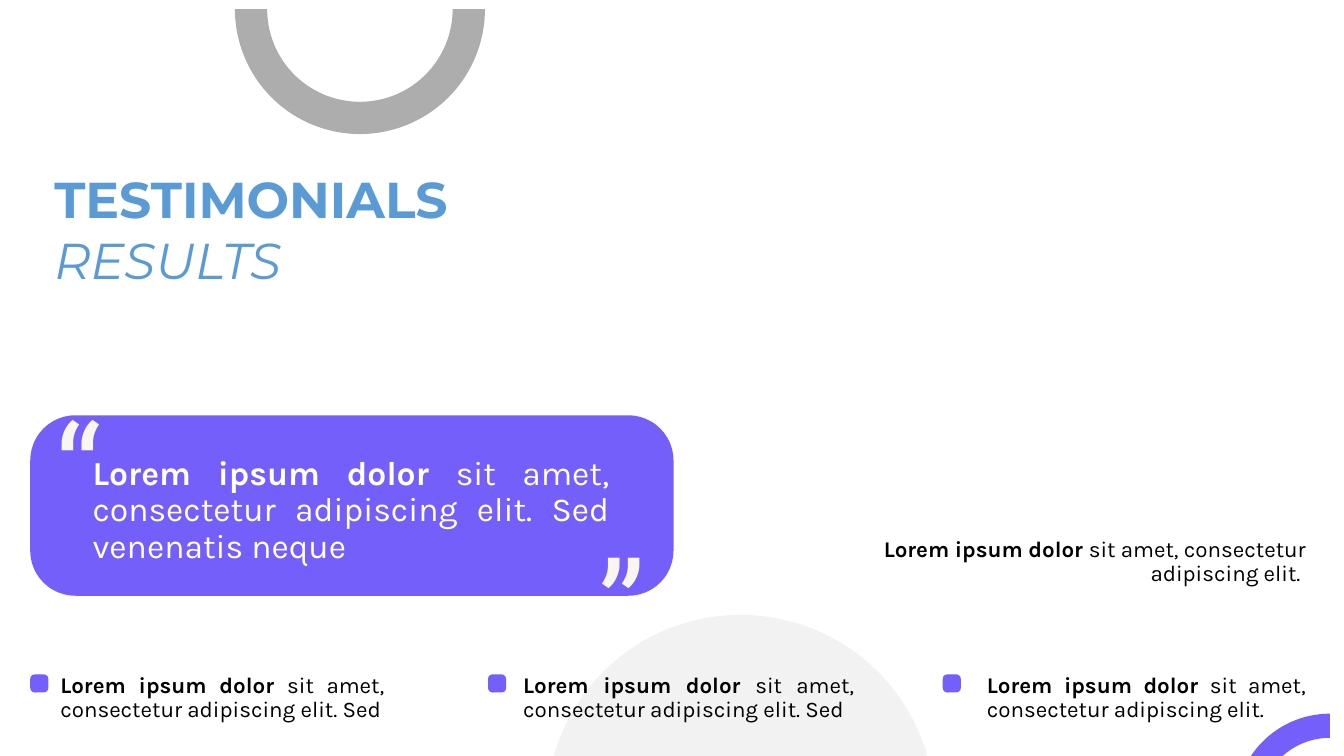
from dataclasses import dataclass
from math import cos, radians, sin

from lxml import etree
from pptx import Presentation
from pptx.dml.color import RGBColor
from pptx.enum.shapes import MSO_SHAPE
from pptx.enum.text import PP_ALIGN
from pptx.oxml.ns import qn
from pptx.util import Pt

PX = 9144  # EMU per px, 100 px to the inch
OVAL, ROUNDED = MSO_SHAPE.OVAL, MSO_SHAPE.ROUNDED_RECTANGLE
RIGHT, JUSTIFY = PP_ALIGN.RIGHT, PP_ALIGN.JUSTIFY

VIOLET, GREY, PALE = "755FFB", "ADADAD", "F2F2F2"
BLUE, CREAM, WHITE, BLACK = "5B9BD5", "F9F6F2", "FFFFFF", "000000"
LEAD = "Lorem ipsum dolor "
SHORT_REST = "sit amet, consectetur adipiscing elit. "


@dataclass
class Box:
    left: int
    top: int
    width: int
    height: int

    def emu(self) -> tuple:
        return tuple(v * PX for v in (self.left, self.top, self.width, self.height))


@dataclass
class HalfRing:
    x: int
    y: int
    outer: int
    inner: int
    start: int  # degrees, clockwise from the right
    color: str


@dataclass
class Quote:
    box: Box
    rest: str
    align: PP_ALIGN = JUSTIFY
    size: int = 16
    color: str = BLACK


TOP_RING = HalfRing(357, 9, 124, 92, 0, GREY)
CORNER_RING = HalfRing(1319, 802, 94, 70, 90, VIOLET)
BULLET_LEFTS = [30, 484, 935]
QUOTE_MARKS = [(Box(45, 381, 100, 245), 0), (Box(551, 375, 100, 245), 180)]
QUOTES = [
    Quote(Box(82, 448, 532, 230), SHORT_REST + "Sed venenatis neque", size=24, color=WHITE),
    Quote(Box(50, 664, 341, 230), SHORT_REST + "Sed"),
    Quote(Box(509, 664, 348, 230), SHORT_REST + "Sed"),
    Quote(Box(969, 664, 336, 230), SHORT_REST),
    Quote(Box(823, 529, 482, 230), SHORT_REST, RIGHT),
]


def rgb(color: str) -> RGBColor:
    return RGBColor.from_string(color)


def paint(shape, color: str) -> None:
    shape.shadow.inherit = False
    shape.fill.solid()
    shape.fill.fore_color.rgb = rgb(color)
    shape.line.fill.background()


def add_half_ring(slide, ring: HalfRing) -> None:
    # Quarter points along the outer edge, then back along the inner edge
    quarters = [ring.start, ring.start + 90, ring.start + 180]
    stops = [(ring.outer, a) for a in quarters] + [(ring.inner, a) for a in reversed(quarters)]
    points = [
        (round((ring.x + r * cos(radians(a))) * PX), round((ring.y + r * sin(radians(a))) * PX))
        for r, a in stops
    ]
    builder = slide.shapes.build_freeform(*points[0])
    builder.add_line_segments(points[1:], close=True)
    half_ring = builder.convert_to_shape()

    # Bend each segment that stays on one edge into a quarter arc
    segments = list(half_ring._element.iter(qn("a:lnTo")))
    for segment, (radius, angle), (next_radius, next_angle) in zip(segments, stops, stops[1:]):
        if radius == next_radius:
            arc = etree.Element(qn("a:arcTo"))
            arc.set("wR", str(radius * PX))
            arc.set("hR", str(radius * PX))
            arc.set("stAng", str(angle * 60000))
            arc.set("swAng", str((next_angle - angle) * 60000))
            segment.getparent().replace(segment, arc)
    paint(half_ring, ring.color)


def add_block(slide, preset, box: Box, color: str) -> None:
    block = slide.shapes.add_shape(preset, *box.emu())
    if preset == ROUNDED:
        block.adjustments[0] = 0.25
    paint(block, color)


def add_frame(slide, box: Box, rotation: int = 0):
    textbox = slide.shapes.add_textbox(*box.emu())
    textbox.rotation = rotation
    textbox.text_frame.word_wrap = True
    return textbox.text_frame


def style(run, font: str, size: float, color: str, bold=False, italic=False) -> None:
    run.font.name = font
    run.font.size = Pt(size)
    run.font.color.rgb = rgb(color)
    run.font.bold = bold
    run.font.italic = italic


def add_quote_mark(slide, box: Box, rotation: int) -> None:
    frame = add_frame(slide, box, rotation)
    frame.text = "“"
    mark = frame.paragraphs[0].runs[0]
    style(mark, "Roboto", 92.3, CREAM)
    mark.font._element.set("spc", "250")


def add_title(slide) -> None:
    frame = add_frame(slide, Box(44, 162, 703, 131))
    frame.text = "TESTIMONIALS\nRESULTS"
    heading, subheading = frame.paragraphs
    style(heading.runs[0], "Montserrat", 36, BLUE, bold=True)
    style(subheading.runs[0], "Montserrat", 36, BLUE, italic=True)


def add_quote(slide, quote: Quote) -> None:
    paragraph = add_frame(slide, quote.box).paragraphs[0]
    paragraph.alignment = quote.align
    paragraph.line_spacing = 0.9
    paragraph.space_before = Pt(10)
    for words, bold in ((LEAD, True), (quote.rest, False)):
        run = paragraph.add_run()
        run.text = words
        style(run, "Karla", quote.size, quote.color, bold=bold)


def main() -> None:
    deck = Presentation()
    deck.slide_width, deck.slide_height = 1333 * PX, 750 * PX
    slide = deck.slides.add_slide(deck.slide_layouts[6])

    # Decorative rings and circle
    add_half_ring(slide, TOP_RING)
    add_block(slide, OVAL, Box(542, 610, 385, 385), PALE)
    add_half_ring(slide, CORNER_RING)

    # Bullets and testimonial panel
    for left in BULLET_LEFTS:
        add_block(slide, ROUNDED, Box(left, 669, 18, 18), VIOLET)
    add_block(slide, ROUNDED, Box(30, 412, 638, 179), VIOLET)

    # Text
    for box, rotation in QUOTE_MARKS:
        add_quote_mark(slide, box, rotation)
    add_title(slide)
    for quote in QUOTES:
        add_quote(slide, quote)

    deck.save("out.pptx")


if __name__ == "__main__":
    main()
